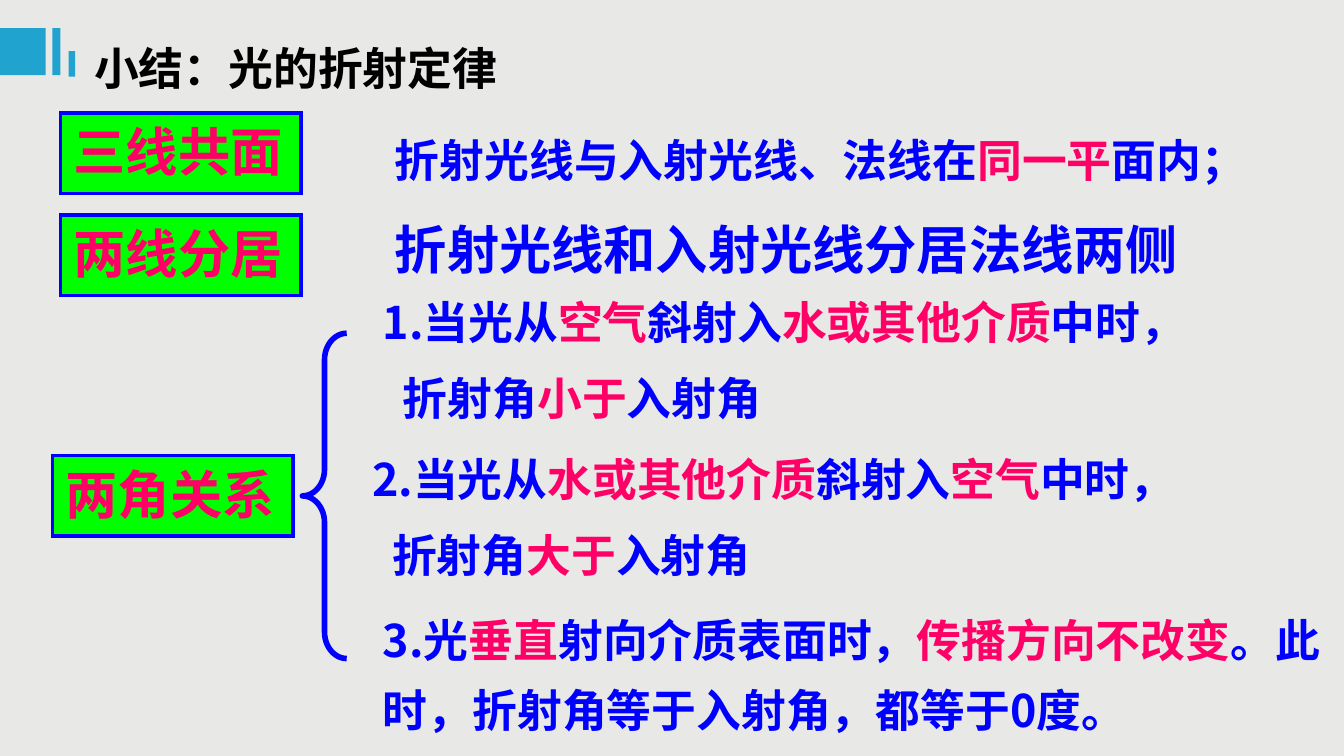
from lxml import etree
from pptx import Presentation
from pptx.dml.color import RGBColor
from pptx.enum.shapes import MSO_SHAPE
from pptx.enum.text import MSO_ANCHOR, MSO_AUTO_SIZE, PP_ALIGN
from pptx.oxml.ns import qn
from pptx.util import Inches, Pt

RECT, BRACE = MSO_SHAPE.RECTANGLE, MSO_SHAPE.LEFT_BRACE
TOP = MSO_ANCHOR.TOP
LEFT = PP_ALIGN.LEFT
FIXED = MSO_AUTO_SIZE.NONE


def color(code):
    return RGBColor.from_string(code)


class Board:
    sans, arial = "Noto Sans CJK SC", "Arial"
    black, blue, pink = "000000", "0000FF", "FF0066"
    green, sky, gray = "00FF00", "21A3D0", "E8E8E6"

    def __init__(self, deck):
        self.slide = deck.slides.add_slide(deck.slide_layouts[5])
        fill = self.slide.background.fill
        fill.solid()
        fill.fore_color.rgb = color(self.gray)

    def run(self, para, text, size, font, tone):
        run = para.add_run()
        run.text = text
        run.font.size = Pt(size)
        run.font.name = font
        run.font.bold = True
        run.font.color.rgb = color(tone)
        east = etree.SubElement(run.font._element, qn("a:ea"))
        east.set("typeface", self.sans)

    def frame(self, shape, wrap=True):
        frame = shape.text_frame
        frame.auto_size = FIXED
        frame.word_wrap = wrap
        frame.vertical_anchor = TOP
        return frame

    def title(self, text, x, y, w, h):
        shape = self.slide.shapes.title
        shape.left, shape.top = Inches(x), Inches(y)
        shape.width, shape.height = Inches(w), Inches(h)
        para = self.frame(shape).paragraphs[0]
        para.alignment = LEFT
        self.run(para, text, 24, self.sans, self.black)

    def shape(self, kind, x, y, w, h, fill=None, line=None, width=2):
        shape = self.slide.shapes.add_shape(
            kind, Inches(x), Inches(y), Inches(w), Inches(h))
        shape.shadow.inherit = False
        if fill:
            shape.fill.solid()
            shape.fill.fore_color.rgb = color(fill)
        else:
            shape.fill.background()
        if line:
            shape.line.color.rgb = color(line)
            shape.line.width = Pt(width)
        else:
            shape.line.fill.background()
        return shape

    def label(self, text, x, y):
        shape = self.shape(RECT, x, y, 1.79, 0.6, self.green, self.blue)
        edge = shape.line._get_or_add_ln()
        etree.SubElement(edge, qn("a:miter")).set("lim", "800000")
        para = self.frame(shape, False).paragraphs[0]
        para.alignment = LEFT
        self.run(para, text, 28, self.arial, self.pink)

    def brace(self, x, y, w, h):
        shape = self.shape(BRACE, x, y, w, h, line=self.blue, width=3)
        shape.adjustments[0] = 0.6

    def text(self, lines, x, y, w, h, size=24, font=sans, lead=None, wrap=True):
        box = self.slide.shapes.add_textbox(
            Inches(x), Inches(y), Inches(w), Inches(h))
        frame = self.frame(box, wrap)
        for row, parts in enumerate(lines):
            para = frame.add_paragraph() if row else frame.paragraphs[0]
            para.line_spacing = lead
            if row:
                para.space_before = Pt(12)
                para._p.get_or_add_pPr().set("marL", str(Inches(0.15)))
            for spot, part in enumerate(parts):
                tone = self.pink if spot % 2 else self.blue
                self.run(para, part, size, font, tone)


def main():
    deck = Presentation()
    deck.slide_width, deck.slide_height = Inches(10), Inches(10 * 9 / 16)
    board = Board(deck)

    for x, y, w, h in [(0, 0.21, 0.34, 0.35), (0.39, 0.21, 0.06, 0.35),
                       (0.51, 0.38, 0.05, 0.19)]:
        board.shape(RECT, x, y, w, h, board.sky)
    board.title("小结：光的折射定律", 0.6, 0.25, 4.99, 0.5)

    for text, x, y in [("三线共面", 0.45, 0.84), ("两线分居", 0.45, 1.6),
                       ("两角关系", 0.39, 3.39)]:
        board.label(text, x, y)
    board.brace(2.25, 2.48, 0.33, 2.42)

    board.text([["折射光线与入射光线、法线在", "同一平", "面内；"]],
               2.84, 0.94, 6.57, 0.5, wrap=False)
    board.text([["折射光线和入射光线分居法线两侧"]],
               2.84, 1.57, 6.06, 0.57, 28, board.arial, wrap=False)

    air, water = "空气", "水或其他介质"
    for mark, start, end, sign, x, y in [
            ("1.", air, water, "小于", 2.75, 2.14),
            ("2.", water, air, "大于", 2.67, 3.31)]:
        board.text([[mark + "当光从", start, "斜射入", end, "中时，"],
                    ["折射角", sign, "入射角"]], x, y, 6.5, 1.1)
    board.text([["3.光", "垂直", "射向介质表面时，", "传播方向不改变",
                 "。此时，折射角等于入射角，都等于0度。"]],
               2.75, 4.39, 7.42, 1.14, lead=1.3)
    deck.save("out.pptx")


if __name__ == "__main__":
    main()
